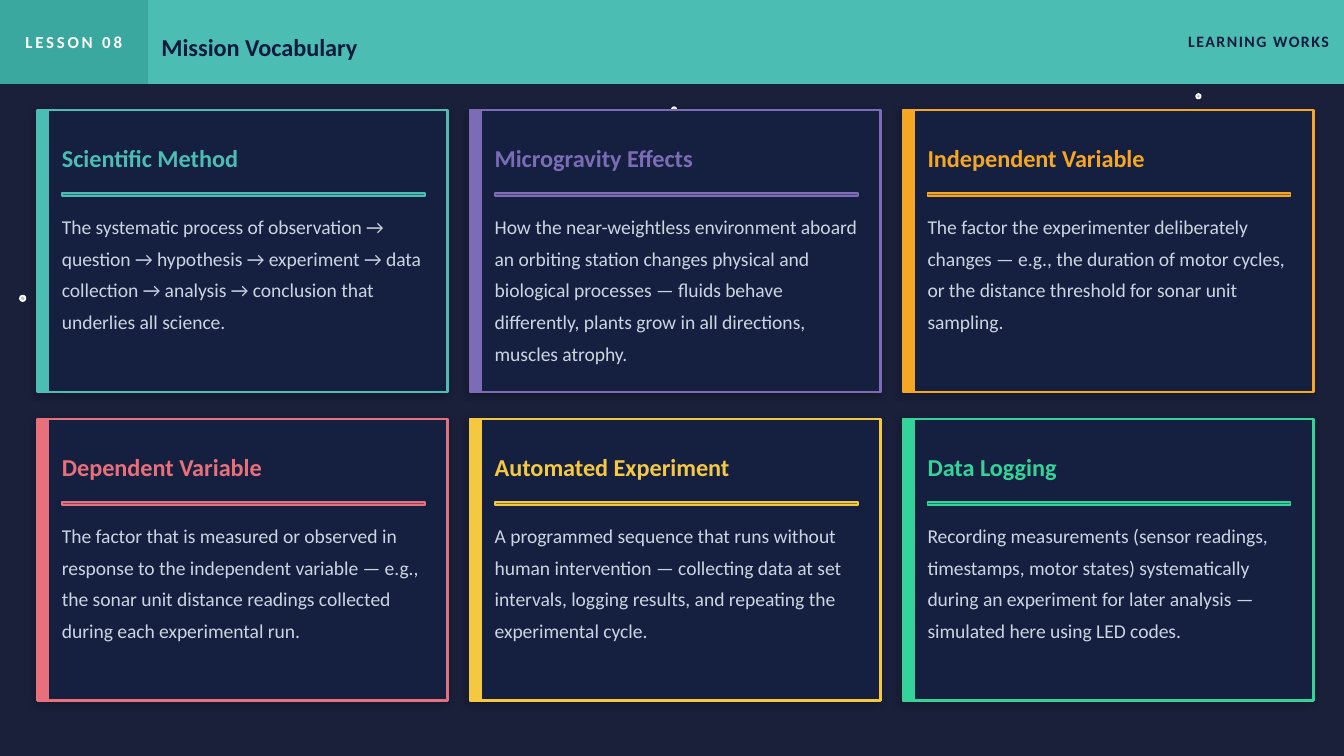
from lxml.etree import SubElement
from pptx import Presentation
from pptx.dml.color import RGBColor
from pptx.enum.shapes import MSO_SHAPE
from pptx.enum.text import MSO_ANCHOR, MSO_AUTO_SIZE, PP_ALIGN
from pptx.oxml.ns import qn
from pptx.util import Cm, Pt

NAVY = "0D1B3E"
CARDS = [
    ("Scientific Method", "4BBDB3",
     "The systematic process of observation → question → hypothesis → experiment → data "
     "collection → analysis → conclusion that underlies all science."),
    ("Microgravity Effects", "7B6CB5",
     "How the near-weightless environment aboard an orbiting station changes physical and "
     "biological processes — fluids behave differently, plants grow in all directions, "
     "muscles atrophy."),
    ("Independent Variable", "F5A623",
     "The factor the experimenter deliberately changes — e.g., the duration of motor cycles, "
     "or the distance threshold for sonar unit sampling."),
    ("Dependent Variable", "E8707A",
     "The factor that is measured or observed in response to the independent variable — e.g., "
     "the sonar unit distance readings collected during each experimental run."),
    ("Automated Experiment", "F5C842",
     "A programmed sequence that runs without human intervention — collecting data at set "
     "intervals, logging results, and repeating the experimental cycle."),
    ("Data Logging", "34D399",
     "Recording measurements (sensor readings, timestamps, motor states) systematically "
     "during an experiment for later analysis — simulated here using LED codes."),
]


def rgb(value):
    return RGBColor.from_string(value)


class Deck:
    font = "Calibri"
    card_fill = "152040"
    body_color = "CBD5E1"

    def __init__(self, prs):
        self.s = prs.slides.add_slide(prs.slide_layouts[5])

    def background(self, color):
        fill = self.s.background.fill
        fill.solid()
        fill.fore_color.rgb = rgb(color)

    def shape(self, box, fill, line=None, width=1, opacity=100, kind=MSO_SHAPE.RECTANGLE):
        sp = self.s.shapes.add_shape(kind, *map(Cm, box))
        sp.shadow.inherit = False
        sp.fill.solid()
        sp.fill.fore_color.rgb = rgb(fill)
        sp.line.color.rgb = rgb(line or fill)
        sp.line.width = Pt(width)
        if opacity < 100:
            color = sp._element.spPr.find(qn("a:solidFill"))[0]
            SubElement(color, qn("a:alpha"), val=str(opacity * 1000))
        return sp

    def dot(self, x, y, size, opacity):
        self.shape((x, y, size, size), "FFFFFF", opacity=opacity, kind=MSO_SHAPE.OVAL)

    def shadow(self, sp):
        effects = sp._element.spPr.find(qn("a:effectLst"))
        outer = SubElement(effects, qn("a:outerShdw"), blurRad=str(Pt(4)), dist=str(Pt(2)),
                           dir=str(135 * 60000), algn="bl", rotWithShape="0")
        color = SubElement(outer, qn("a:srgbClr"), val="000000")
        SubElement(color, qn("a:alpha"), val="18000")

    def fill_text(self, sp, text, size, color, bold=True, align=PP_ALIGN.LEFT,
                  anchor=MSO_ANCHOR.MIDDLE, top=0, right=0, tracking=0, spacing=1):
        tf = sp.text_frame
        tf.word_wrap = True
        tf.auto_size = MSO_AUTO_SIZE.NONE
        tf.vertical_anchor = anchor
        tf.margin_left = tf.margin_bottom = 0
        tf.margin_top, tf.margin_right = Cm(top), Cm(right)
        p = tf.paragraphs[0]
        p.alignment = align
        p.line_spacing = spacing
        r = p.add_run()
        r.text = text
        r.font.name = self.font
        r.font.size = Pt(size)
        r.font.bold = bold
        r.font.color.rgb = rgb(color)
        if tracking:
            r._r.get_or_add_rPr().set("spc", str(int(tracking * 100)))

    def text(self, box, text, size, color, **style):
        self.fill_text(self.s.shapes.add_textbox(*map(Cm, box)), text, size, color, **style)

    def title(self, box, text, size, color, **style):
        sp = self.s.shapes.title
        self.s.shapes._spTree.append(sp._element)
        sp.left, sp.top, sp.width, sp.height = map(Cm, box)
        self.fill_text(sp, text, size, color, **style)

    def card(self, x, y, term, color, meaning):
        left = x + 0.46
        self.shadow(self.shape((x, y, 7.75, 5.33), self.card_fill, color, 1.5))
        self.shape((x, y, 0.2, 5.33), color)
        self.text((left, y + 0.3, 7.11, 1.22), term, 13, color)
        self.shape((left, y + 1.57, 6.86, 0.05), color, opacity=50)
        self.text((left, y + 1.83, 6.99, 3.18), meaning, 10.5, self.body_color,
                  bold=False, anchor=MSO_ANCHOR.TOP, spacing=1.35)


def main():
    prs = Presentation()
    prs.slide_width, prs.slide_height = Cm(25.4), Cm(14.29)
    deck = Deck(prs)
    deck.background("1A1F3A")
    for star in [(12.7, 2.03, 0.08, 65), (22.61, 1.78, 0.08, 60), (0.38, 5.59, 0.1, 70)]:
        deck.dot(*star)

    lesson_box = (0, 0, 2.79, 1.57)
    deck.shape((0, 0, 25.4, 1.57), "4BBDB3")
    deck.shape(lesson_box, "3AA89E")
    deck.text(lesson_box, "LESSON 08", 9, "FFFFFF", align=PP_ALIGN.CENTER, tracking=1.5)
    deck.title((3.05, 0, 19.05, 1.57), "Mission Vocabulary", 13, NAVY, top=0.2)
    deck.text((19.56, 0, 5.84, 1.57), "LEARNING WORKS", 8.5, NAVY,
              align=PP_ALIGN.RIGHT, right=0.28, tracking=0.8)

    for i, card in enumerate(CARDS):
        row, col = divmod(i, 3)
        deck.card(0.71 + col * 8.18, 2.08 + row * 5.84, *card)
    prs.save("out.pptx")


if __name__ == "__main__":
    main()
